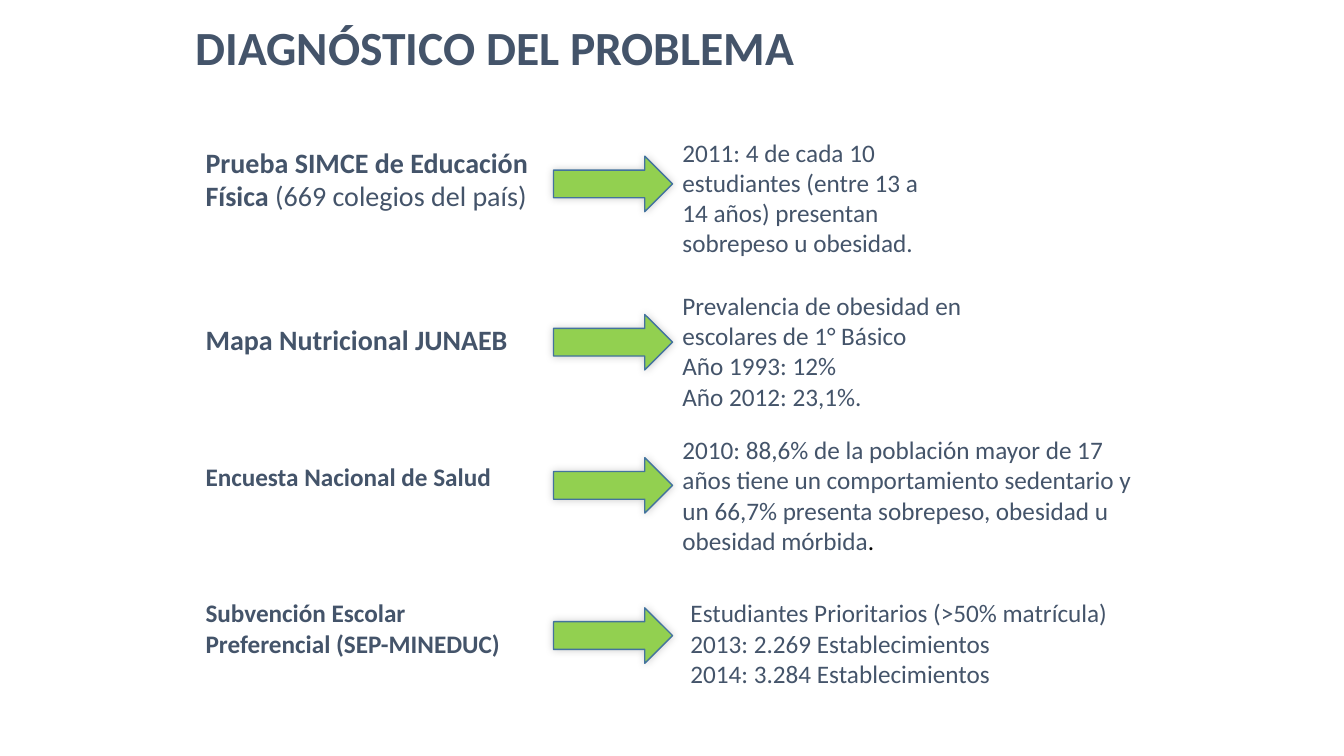
from lxml import etree
from pptx import Presentation
from pptx import util as u
from pptx.dml.color import RGBColor
from pptx.enum import shapes, text
from pptx.oxml.ns import qn

SLATE, GREEN, BLUE, BLACK = "44546A", "92D050", "43739E", "000000"


def color(value):
    return RGBColor.from_string(value)


class SlideBuilder:
    """Holds the text style and the current slide, and adds its elements."""

    def __init__(self, slide, font):
        self.slide = slide
        self.font = font

    def fill_text(self, frame, paragraphs, **style):
        layout = {"word_wrap": True, "auto_size": text.MSO_AUTO_SIZE.NONE,
                  "vertical_anchor": text.MSO_ANCHOR.TOP}
        for name, value in layout.items():
            setattr(frame, name, value)
        for index, spans in enumerate(paragraphs):
            para = frame.add_paragraph() if index else frame.paragraphs[0]
            para.alignment = text.PP_ALIGN.LEFT
            for words, changes in spans:
                span = para.add_run()
                span.text = words
                look = {"name": self.font, "bold": False, "color": SLATE, **style, **changes}
                span.font.color.rgb = color(look.pop("color"))
                for name, value in look.items():
                    setattr(span.font, name, value)

    def title(self, words, left, top, width, height, size):
        box = self.slide.shapes.title
        place = {"left": left, "top": top, "width": width, "height": height}
        for name, value in place.items():
            setattr(box, name, u.Inches(value))
        self.fill_text(box.text_frame, [[(words, {})]], size=u.Pt(size), bold=True)

    def textbox(self, paragraphs, left, top, width, height, size, bold=False):
        box = self.slide.shapes.add_textbox(*map(u.Inches, (left, top, width, height)))
        self.fill_text(box.text_frame, paragraphs, size=u.Pt(size), bold=bold)

    def arrow(self, left, top, width, height):
        arrow = self.slide.shapes.add_shape(
            shapes.MSO_SHAPE.RIGHT_ARROW, *map(u.Inches, (left, top, width, height)))
        arrow.fill.solid()
        arrow.fill.fore_color.rgb = color(GREEN)
        arrow.line.color.rgb = color(BLUE)
        arrow.line.width = u.Pt(1)
        arrow.shadow.inherit = False
        effects = arrow.element.spPr.find(qn("a:effectLst"))
        shadow = etree.SubElement(effects, qn("a:outerShdw"), blurRad=str(u.Pt(6)),
                                  dist="0", dir=str(225 * 60000), rotWithShape="0")
        tint = etree.SubElement(shadow, qn("a:srgbClr"), val=BLACK)
        etree.SubElement(tint, qn("a:alpha"), val="20000")


ROWS = [
    {"source": [[("Prueba SIMCE de Educación Física", {}),
                 (" (669 colegios del país)", {"bold": False})]],
     "source_place": (1.94, 1.39, 3.78, 0.77), "source_size": 20, "arrow_top": 1.55,
     "finding": [[("2011: 4 de cada 10 estudiantes (entre 13 a 14 años) "
                   "presentan sobrepeso u obesidad.", {})]],
     "finding_place": (6.67, 1.31, 2.68, 1.31)},
    {"source": [[("Mapa Nutricional JUNAEB", {})]],
     "source_place": (1.94, 3.15, 3.62, 0.44), "source_size": 20, "arrow_top": 3.12,
     "finding": [[("Prevalencia de obesidad en escolares de 1° Básico", {})],
                 [("Año 1993: 12%", {})],
                 [("Año 2012: 23,1%.", {})]],
     "finding_place": (6.67, 2.83, 3.07, 1.31)},
    {"source": [[("Encuesta Nacional de Salud", {})]],
     "source_place": (1.94, 4.53, 3.46, 0.71), "source_size": 18, "arrow_top": 4.54,
     "finding": [[("2010: 88,6% de la población mayor de 17 años tiene un "
                   "comportamiento sedentario y un 66,7% presenta sobrepeso, "
                   "obesidad u obesidad mórbida", {}), (".", {"color": BLACK})]],
     "finding_place": (6.67, 4.26, 4.88, 1.31)},
    {"source": [[("Subvención Escolar Preferencial (SEP-MINEDUC)", {})]],
     "source_place": (1.94, 5.88, 3.46, 1.01), "source_size": 18, "arrow_top": 6.03,
     "finding": [[("Estudiantes Prioritarios (>50% matrícula)", {})],
                 [("2013: 2.269 Establecimientos", {})],
                 [("2014: 3.284 Establecimientos", {})]],
     "finding_place": (6.75, 5.88, 4.8, 1.01)},
]


def main():
    deck = Presentation()
    deck.slide_width, deck.slide_height = u.Inches(13.33), u.Inches(7.5)
    page = SlideBuilder(deck.slides.add_slide(deck.slide_layouts[5]), "Calibri")
    page.title("DIAGNÓSTICO DEL PROBLEMA", 1.84, 0.13, 9.31, 1.25, 34)
    for row in ROWS:
        page.textbox(row["source"], *row["source_place"], row["source_size"], bold=True)
        page.textbox(row["finding"], *row["finding_place"], 18)
        page.arrow(5.49, row["arrow_top"], 1.18, 0.55)
    deck.save("out.pptx")


if __name__ == "__main__":
    main()
